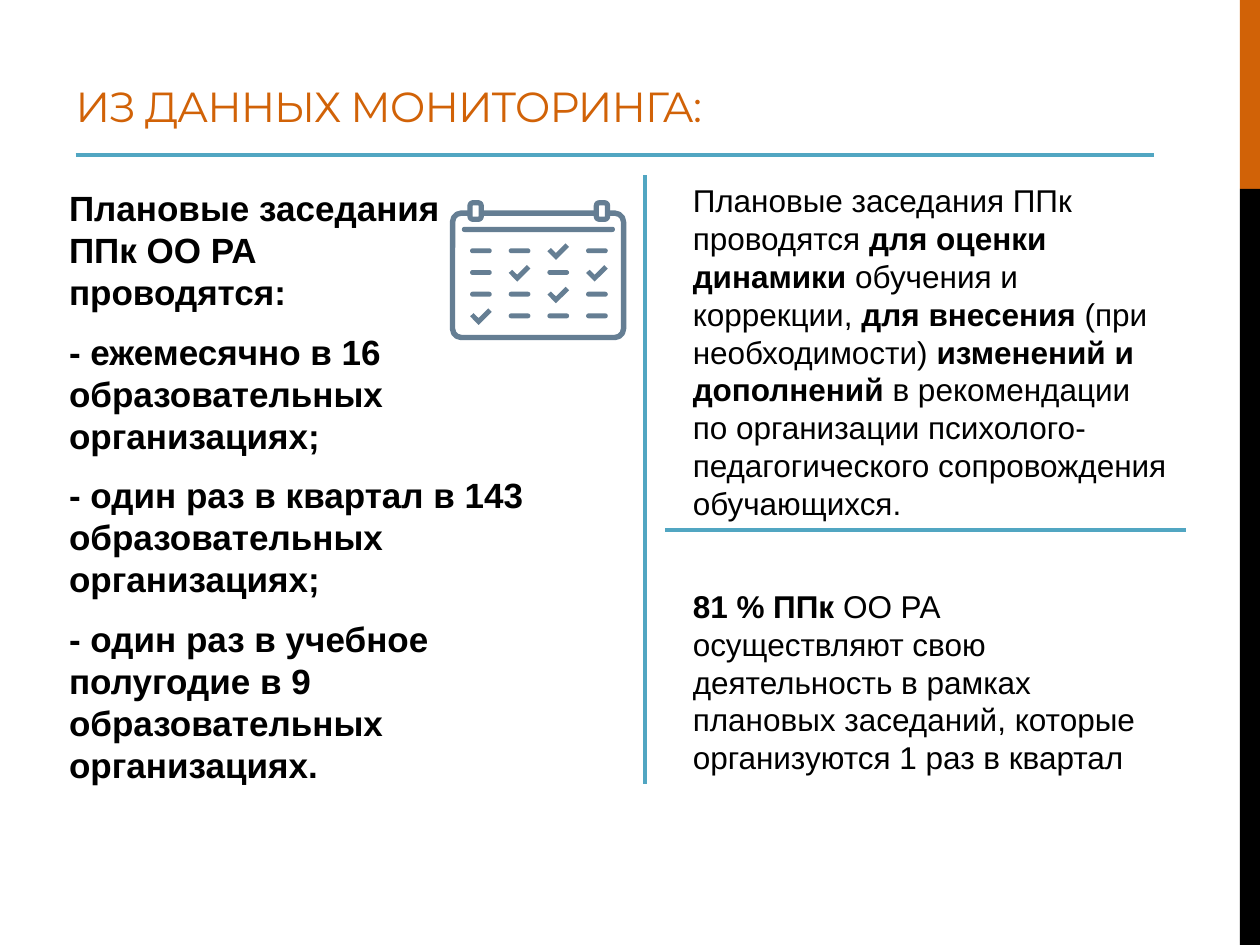
from lxml import etree
from pptx import Presentation
from pptx.dml.color import RGBColor
from pptx.enum.shapes import MSO_CONNECTOR, MSO_SHAPE
from pptx.enum.text import MSO_ANCHOR, MSO_AUTO_SIZE, PP_ALIGN
from pptx.oxml.ns import qn
from pptx.util import Pt

RECTANGLE, ROUNDED = MSO_SHAPE.RECTANGLE, MSO_SHAPE.ROUNDED_RECTANGLE
STRAIGHT = MSO_CONNECTOR.STRAIGHT
TOP, BOTTOM = MSO_ANCHOR.TOP, MSO_ANCHOR.BOTTOM
LEFT, NO_AUTOFIT = PP_ALIGN.LEFT, MSO_AUTO_SIZE.NONE

# Content: a paragraph is a list of (text, bold) runs
TITLE = "ИЗ ДАННЫХ МОНИТОРИНГА:"
SCHEDULE = [
    [("Плановые заседания\vППк ОО РА\vпроводятся:", True)],
    [("- ежемесячно в 16 образовательных организациях;", True)],
    [("- один раз в квартал в 143 образовательных организациях;", True)],
    [("- один раз в учебное полугодие в 9 образовательных организациях.", True)],
]
PURPOSE = [[
    ("Плановые заседания ППк проводятся ", False),
    ("для оценки динамики", True),
    (" обучения и коррекции, ", False),
    ("для внесения ", True),
    ("(при необходимости) ", False),
    ("изменений и дополнений", True),
    (" в рекомендации по организации психолого-педагогического "
     "сопровождения обучающихся.", False),
]]
SHARE = [[
    ("81 % ППк", True),
    (" ОО РА осуществляют свою деятельность в рамках плановых заседаний, "
     "которые организуются 1 раз в квартал", False),
]]
CALENDAR = ["--x-", "-x-x", "--x-", "x---"]  # x is a tick, - is a dash

ORANGE, BLACK, WHITE = "D16207", "000000", "FFFFFF"
TEAL, SLATE = "51A6C2", "657E93"

# Lengths in points
SIDE_BAR = [(0, 108, ORANGE), (108, 432, BLACK)]
RULES = [(43.2, 88.6, 659.5, 88.6), (368.6, 100.1, 368.6, 447.8),
         (380.2, 303.1, 677.5, 303.1)]
COLUMN_START, COLUMN_STEP = 274.8, 22.1
ROW_START, ROW_STEP = 143.3, 12.4
TICK = [(-6.2, 0.3), (-4.2, -1.5), (-1.3, 1.3), (4.2, -4.2), (6.2, -2.2), (-1.3, 5.2)]


def color(value):
    return RGBColor.from_string(value)


def paint(shape, fill, line=None, width=0):
    shape.shadow.inherit = False
    if fill:
        shape.fill.solid()
        shape.fill.fore_color.rgb = color(fill)
    else:
        shape.fill.background()
    if line:
        shape.line.color.rgb = color(line)
        shape.line.width = Pt(width)
    else:
        shape.line.fill.background()


def add_box(shapes, kind, left, top, width, height, fill, line=None,
            line_width=0, radius=None):
    shape = shapes.add_shape(kind, Pt(left), Pt(top), Pt(width), Pt(height))
    if radius is not None:
        shape.adjustments[0] = radius
    paint(shape, fill, line, line_width)


def add_rule(shapes, left, top, right, bottom):
    rule = shapes.add_connector(STRAIGHT, Pt(left), Pt(top), Pt(right), Pt(bottom))
    rule.line.color.rgb = color(TEAL)
    rule.line.width = Pt(2.25)
    etree.SubElement(rule._element.spPr, qn("a:effectLst"))


def add_text(shapes, left, top, width, height, paragraphs, size, before=0, after=0):
    box = shapes.add_textbox(Pt(left), Pt(top), Pt(width), Pt(height))
    frame = box.text_frame
    frame.word_wrap = True
    frame.vertical_anchor = TOP
    for index, runs in enumerate(paragraphs):
        paragraph = frame.add_paragraph() if index else frame.paragraphs[0]
        paragraph.font.size = Pt(size)
        paragraph.font.name = "Arial"
        paragraph.font.color.rgb = color(BLACK)
        paragraph.line_spacing = Pt(size * 1.2)
        paragraph.space_before, paragraph.space_after = Pt(before), Pt(after)
        for text, bold in runs:
            for number, part in enumerate(text.split("\v")):
                if number:
                    paragraph.add_line_break()
                run = paragraph.add_run()
                run.text = part
                run.font.bold = bold


def add_tick(shapes, x, y):
    points = [(Pt(x + dx), Pt(y + dy)) for dx, dy in TICK]
    builder = shapes.build_freeform(*points[0])
    builder.add_line_segments(points[1:], close=True)
    paint(builder.convert_to_shape(), SLATE)


def add_calendar(slide):
    shapes = slide.shapes.add_group_shape().shapes
    add_box(shapes, ROUNDED, 258.6, 121.8, 97.7, 71.1, None, SLATE, 3.1, 0.07)
    for left in (268.6, 340.8):
        add_box(shapes, ROUNDED, left, 115.9, 6.4, 9.4, WHITE, SLATE, 3, 0.25)
    add_box(shapes, ROUNDED, 263.9, 129.6, 87.5, 3, SLATE, radius=0.5)
    for row, marks in enumerate(CALENDAR):
        for column, mark in enumerate(marks):
            x = COLUMN_START + column * COLUMN_STEP
            y = ROW_START + row * ROW_STEP
            if mark == "x":
                add_tick(shapes, x, y)
            else:
                add_box(shapes, ROUNDED, x - 6.2, y - 1.4, 12.4, 2.8, SLATE, radius=0.5)


presentation = Presentation()
presentation.slide_width, presentation.slide_height = Pt(720), Pt(540)
slide = presentation.slides.add_slide(presentation.slide_layouts[5])

# Side bar
for top, height, fill in SIDE_BAR:
    add_box(slide.shapes, RECTANGLE, 708.5, top, 11.5, height, fill)

# Title
title = slide.shapes.title
title.left, title.top, title.width, title.height = Pt(36), Pt(34.6), Pt(455.8), Pt(43.9)
title.text_frame.text = TITLE
title.text_frame.vertical_anchor = BOTTOM
title.text_frame.auto_size = NO_AUTOFIT
heading = title.text_frame.paragraphs[0]
heading.alignment = LEFT
heading.font.size = Pt(24)
heading.font.name = "Montserrat"
heading.font.color.rgb = color(ORANGE)
heading.runs[0].font._element.set("spc", "-60")

# Text columns
add_text(slide.shapes, 32.4, 103, 316.8, 406, SCHEDULE, 20, before=4, after=6)
add_text(slide.shapes, 388.8, 100.1, 288, 203.8, PURPOSE, 18)
add_text(slide.shapes, 388.8, 331.9, 276.5, 116.6, SHARE, 18)

# Dividing lines and calendar
for rule in RULES:
    add_rule(slide.shapes, *rule)
add_calendar(slide)

presentation.save("out.pptx")
